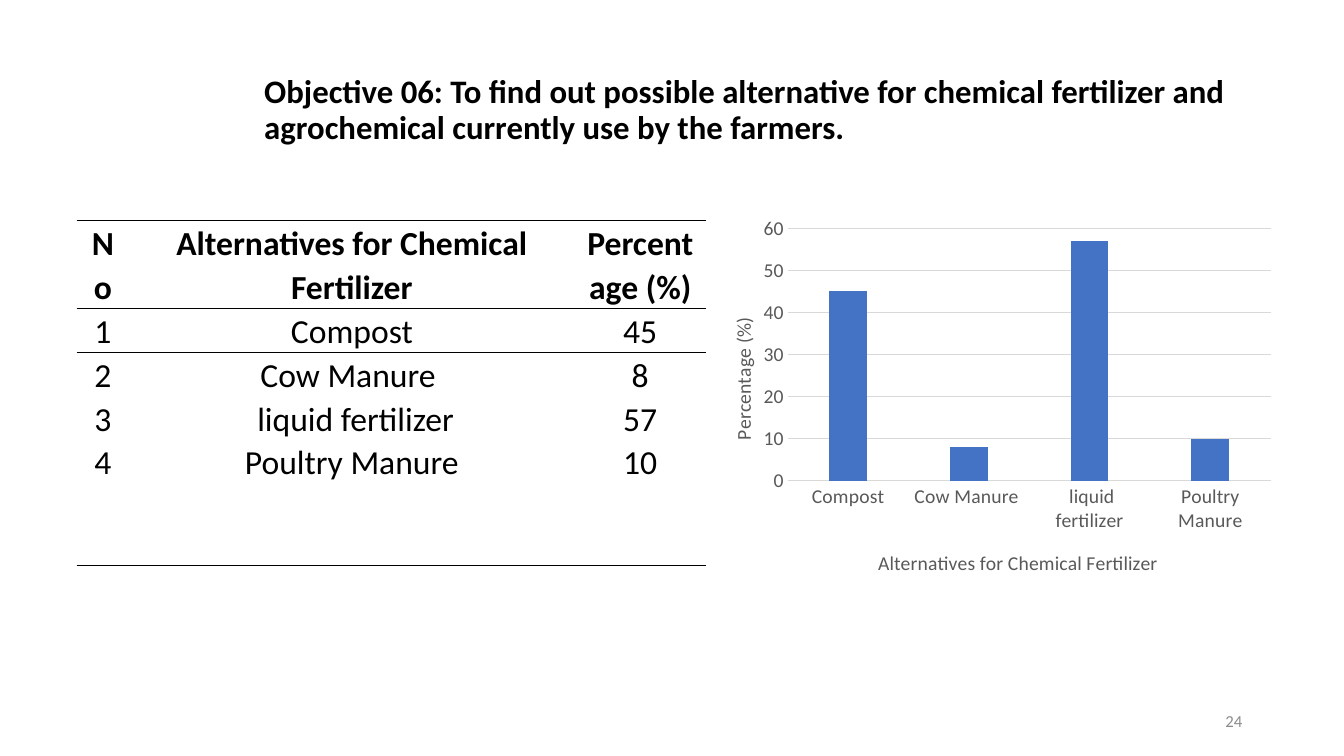
from lxml import etree
from pptx import Presentation, util as u
from pptx.chart.data import CategoryChartData
from pptx.dml.color import RGBColor
from pptx.enum import chart as charts, text
from pptx.oxml.ns import qn

# Content
TITLE = ("Objective 06: To find out possible alternative for chemical fertilizer "
         "and agrochemical currently use by the farmers.")
HEADER = ("No", "Alternatives for Chemical Fertilizer", "Percentage (%)")
ALTERNATIVES = [("Compost", 45), ("Cow Manure ", 8),
                (" liquid fertilizer", 57), ("Poultry Manure", 10)]
CATEGORY_TITLE = "Alternatives for Chemical Fertilizer"
VALUE_TITLE = "Percentage (%)"
PAGE_NUMBER = "24"

# Look
FONT = "Calibri"
BLACK = RGBColor(0, 0, 0)
GREY = RGBColor(0x59, 0x59, 0x59)
NUMBER_GREY = RGBColor(0x8C, 0x8C, 0x8C)
GRID_GREY = RGBColor(0xD9, 0xD9, 0xD9)
BAR_BLUE = RGBColor(0x44, 0x72, 0xC4)
NO_STYLE = "{2D5ABB26-0587-4C30-8999-92F81FD0307C}"

# Grid in inches
COLUMNS = (0.52, 4.42, 1.3)
HEADER_ROW, BODY_ROW, LAST_ROW = 0.86, 0.42, 0.39
TABLE_LEFT, TABLE_TOP = 0.76, 2.19
ROWS = [HEADER_ROW] + [BODY_ROW] * (len(ALTERNATIVES) + 1) + [LAST_ROW]


def inches(*lengths):
    return [u.Inches(length) for length in lengths]


def style(font, size, color, bold=False):
    font.name, font.size, font.bold = FONT, u.Pt(size), bold
    font.color.rgb = color


def write(frame, words, size, color=BLACK, bold=False, align=text.PP_ALIGN.LEFT,
          spacing=1.0, anchor=text.MSO_ANCHOR.MIDDLE):
    frame.word_wrap = True
    frame.vertical_anchor = anchor
    para = frame.paragraphs[0]
    para.alignment, para.line_spacing = align, spacing
    span = para.add_run()
    span.text = words
    style(span.font, size, color, bold)


def rule(cell, side):
    line = etree.SubElement(cell._tc.get_or_add_tcPr(), qn(f"a:{side}"), w="12700")
    fill = etree.SubElement(line, qn("a:solidFill"))
    etree.SubElement(fill, qn("a:srgbClr"), val=str(BLACK))


def place(parent, index, **values):
    """Give a chart part a fixed position, as shares of the chart."""
    layout = parent.find(qn("c:layout"))
    if layout is None:
        layout = etree.Element(qn("c:layout"))
        parent.insert(index, layout)
    manual = etree.SubElement(layout, qn("c:manualLayout"))
    for name, value in values.items():
        etree.SubElement(manual, qn(f"c:{name}"), val=str(value))


def format_axis(axis, words, x, y, turn):
    style(axis.tick_labels.font, 14, GREY)
    axis.major_tick_mark = axis.minor_tick_mark = charts.XL_TICK_MARK.NONE
    frame = axis.axis_title.text_frame
    frame.text = words
    style(frame.paragraphs[0].runs[0].font, 14, GREY)
    frame._txBody.bodyPr.set("rot", str(turn * 60000))
    frame._txBody.bodyPr.set("vert", "horz")
    place(axis.axis_title._element, 1, xMode="edge", yMode="edge", x=x, y=y)


def add_table(page):
    frame = page.shapes.add_table(len(ROWS), len(COLUMNS), *inches(
        TABLE_LEFT, TABLE_TOP, sum(COLUMNS), sum(ROWS)))
    table = frame.table
    table.horz_banding = table.first_row = False
    table._tbl.tblPr.find(qn("a:tableStyleId")).text = NO_STYLE
    for column, width in zip(table.columns, COLUMNS):
        column.width = u.Inches(width)
    for row, height in zip(table.rows, ROWS):
        row.height = u.Inches(height)

    body = [(str(number), name, str(share))
            for number, (name, share) in enumerate(ALTERNATIVES, 1)]
    content = [HEADER] + body
    last = len(ROWS) - 1
    for r in range(len(ROWS)):
        for c in range(len(COLUMNS)):
            cell = table.cell(r, c)
            cell.margin_left = cell.margin_right = u.Inches(0.07)
            cell.margin_top = cell.margin_bottom = 0
            if r == 0:
                rule(cell, "lnT")
            if r == 1:
                rule(cell, "lnT")
            if r in (0, last):
                rule(cell, "lnB")
            cell.fill.background()
            if r < len(content):
                write(cell.text_frame, content[r][c], 24, bold=r == 0,
                      align=text.PP_ALIGN.CENTER, spacing=1.07)
                middle = r == 0 or c == 2
                cell.vertical_anchor = (text.MSO_ANCHOR.MIDDLE if middle
                                        else text.MSO_ANCHOR.BOTTOM)


def add_chart(page):
    data = CategoryChartData()
    data.categories = [name for name, share in ALTERNATIVES]
    data.add_series("Series 1", [share for name, share in ALTERNATIVES])
    chart = page.shapes.add_chart(charts.XL_CHART_TYPE.COLUMN_CLUSTERED,
                                  *inches(7, 2.05, 5.77, 3.74), data).chart
    chart.has_legend = chart.has_title = False
    style(chart.font, 14, BLACK)
    plot = chart.plots[0]
    plot.gap_width, plot.overlap, plot.vary_by_categories = 219, -27, False
    fill = plot.series[0].format.fill
    fill.solid()
    fill.fore_color.rgb = BAR_BLUE
    place(chart._chartSpace.chart.plotArea, 0, layoutTarget="inner",
          xMode="edge", yMode="edge", x=0.141, y=0.058, w=0.83, h=0.669)

    format_axis(chart.category_axis, CATEGORY_TITLE, 0.29, 0.9, 0)
    format_axis(chart.value_axis, VALUE_TITLE, 0.035, 0.285, -90)
    values = chart.value_axis
    values.minimum_scale, values.maximum_scale, values.major_unit = 0, 60, 10
    values.format.line.fill.background()
    for line in (chart.category_axis.format.line, values.major_gridlines.format.line):
        line.color.rgb, line.width = GRID_GREY, u.Pt(0.75)


def main():
    deck = Presentation()
    deck.slide_width, deck.slide_height = inches(13.33, 7.5)
    page = deck.slides.add_slide(deck.slide_layouts[5])

    # Title
    title = page.shapes.title
    title.left, title.top, title.width, title.height = inches(2.52, 0.6, 10.5, 1)
    write(title.text_frame, TITLE, 23.4, bold=True, spacing=0.9)

    # Table and chart side by side
    add_table(page)
    add_chart(page)

    # Page number
    box = page.shapes.add_textbox(*inches(9.42, 6.95, 3, 0.4))
    write(box.text_frame, PAGE_NUMBER, 12, NUMBER_GREY, align=text.PP_ALIGN.RIGHT)

    deck.save("out.pptx")


if __name__ == "__main__":
    main()
